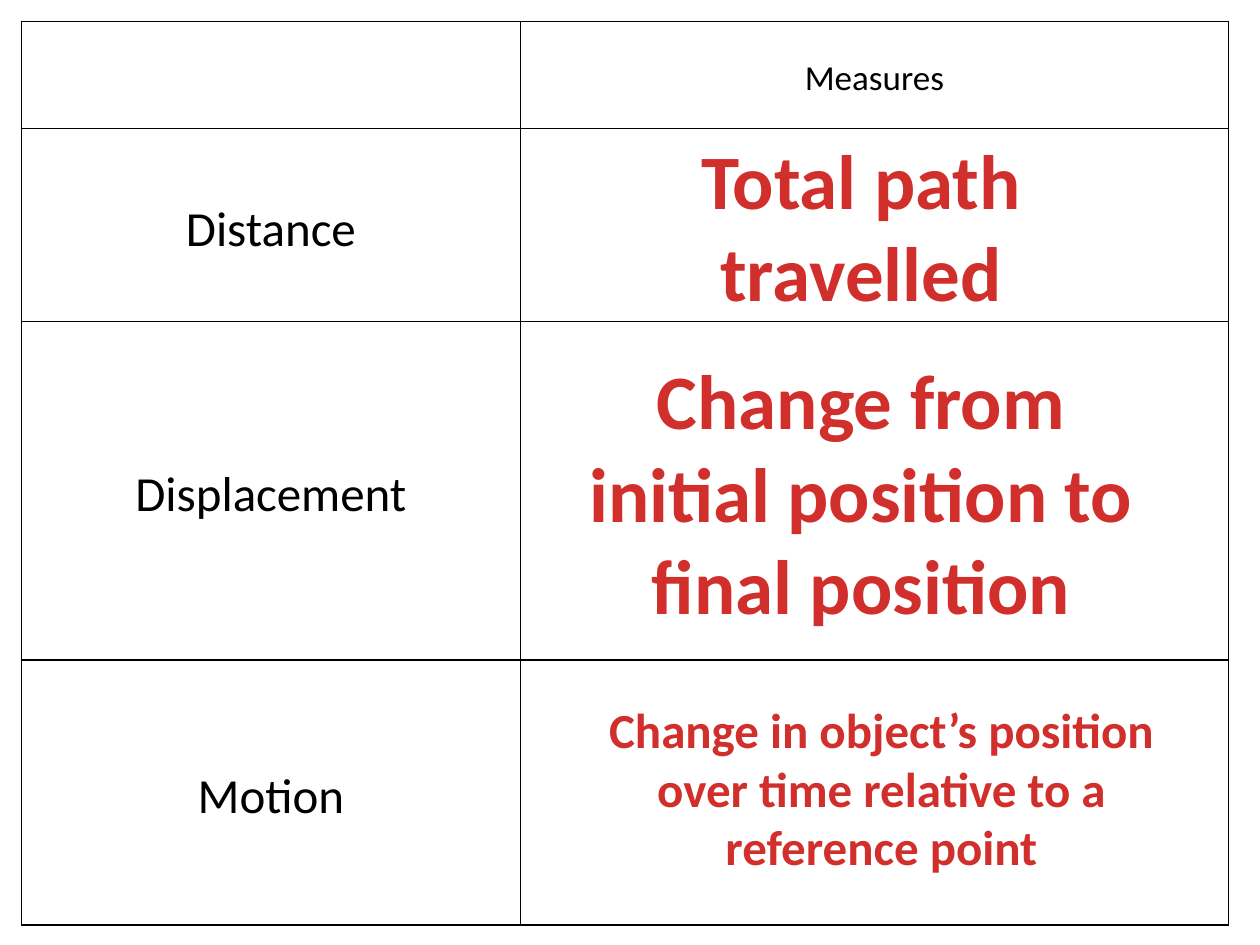
"""Build a slide with a table that defines distance, displacement and motion."""
from dataclasses import dataclass

from lxml import etree
from pptx import Presentation
from pptx.dml.color import RGBColor
from pptx.enum.text import MSO_ANCHOR, MSO_AUTO_SIZE, PP_ALIGN
from pptx.oxml.ns import qn
from pptx.util import Inches, Pt

CENTER = PP_ALIGN.CENTER
MIDDLE = MSO_ANCHOR.MIDDLE
GROW = MSO_AUTO_SIZE.SHAPE_TO_FIT_TEXT
BLACK = RGBColor(0x00, 0x00, 0x00)
RED = RGBColor(0xD0, 0x2F, 0x2C)
FONT = "Calibri"
BLANK_LAYOUT = 6
COLUMN_WIDTHS = (3.96, 5.62)
ROW_HEIGHTS = (0.85, 1.53, 2.69, 2.1)
TABLE_EDGE = 0.17
ANSWER_WIDTH = 4.83


@dataclass
class Label:
    row: int
    column: int
    text: str
    size: int


@dataclass
class Answer:
    left: float
    top: float
    height: float
    text: str
    size: int


LABELS = (
    Label(0, 1, "Measures", 20),
    Label(1, 0, "Distance", 28),
    Label(2, 0, "Displacement", 28),
    Label(3, 0, "Motion", 28),
)
ANSWERS = (
    Answer(4.42, 1, 1.58, "Total path travelled", 44),
    Answer(4.42, 2.75, 2.32, "Change from initial position to final position", 44),
    Answer(4.58, 5.5, 1.51, "Change in object’s position over time relative to a reference point", 28),
)


def add_text(frame, text: str, size: int, color: RGBColor, bold: bool = False) -> None:
    paragraph = frame.paragraphs[0]
    paragraph.alignment = CENTER
    span = paragraph.add_run()
    span.text = text
    span.font.name = FONT
    span.font.size = Pt(size)
    span.font.bold = bold
    span.font.color.rgb = color


def style_cell(cell) -> None:
    properties = cell._tc.get_or_add_tcPr()
    for side in ("a:lnL", "a:lnR", "a:lnT", "a:lnB"):
        line = etree.SubElement(properties, qn(side), w=str(Pt(1)))
        fill = etree.SubElement(line, qn("a:solidFill"))
        etree.SubElement(fill, qn("a:srgbClr"), val=str(BLACK))
    cell.fill.background()
    cell.vertical_anchor = MIDDLE
    cell.margin_left = cell.margin_right = Inches(0.07)
    cell.margin_top = cell.margin_bottom = 0


def add_definition_table(page) -> None:
    frame = page.shapes.add_table(
        len(ROW_HEIGHTS), len(COLUMN_WIDTHS), Inches(TABLE_EDGE), Inches(TABLE_EDGE),
        Inches(sum(COLUMN_WIDTHS)), Inches(sum(ROW_HEIGHTS)),
    )
    table = frame.table
    table.first_row = table.horz_banding = False
    for column, width in zip(table.columns, COLUMN_WIDTHS):
        column.width = Inches(width)
    for row, height in zip(table.rows, ROW_HEIGHTS):
        row.height = Inches(height)
    for cell in table.iter_cells():
        style_cell(cell)
    for label in LABELS:
        frame = table.cell(label.row, label.column).text_frame
        add_text(frame, label.text, label.size, BLACK)
        frame.paragraphs[0].line_spacing = 1.15


def add_answer(page, answer: Answer) -> None:
    box = page.shapes.add_textbox(
        Inches(answer.left), Inches(answer.top), Inches(ANSWER_WIDTH), Inches(answer.height)
    )
    box.text_frame.word_wrap = True
    box.text_frame.auto_size = GROW
    add_text(box.text_frame, answer.text, answer.size, RED, bold=True)


def main() -> None:
    deck = Presentation()
    deck.slide_width, deck.slide_height = Inches(10), Inches(7.5)
    page = deck.slides.add_slide(deck.slide_layouts[BLANK_LAYOUT])
    add_definition_table(page)
    for answer in ANSWERS:
        add_answer(page, answer)
    deck.save("out.pptx")


if __name__ == "__main__":
    main()
